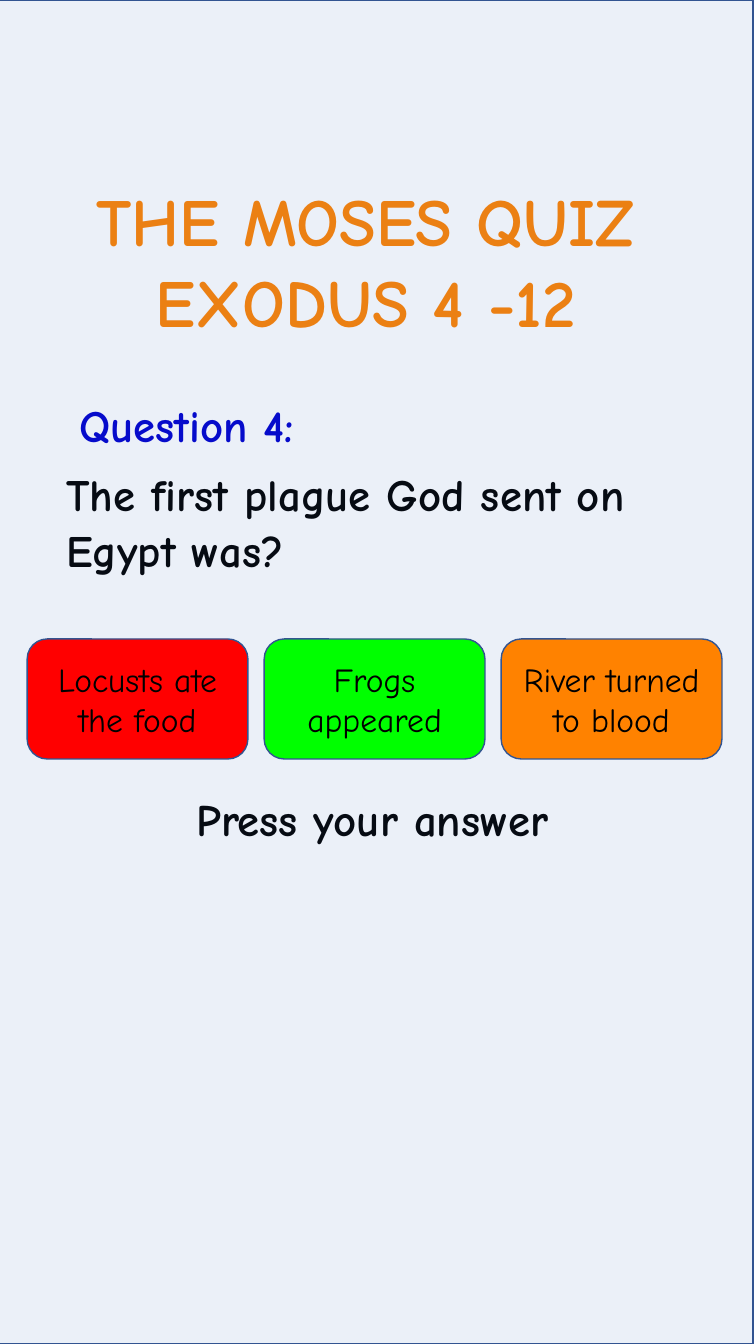
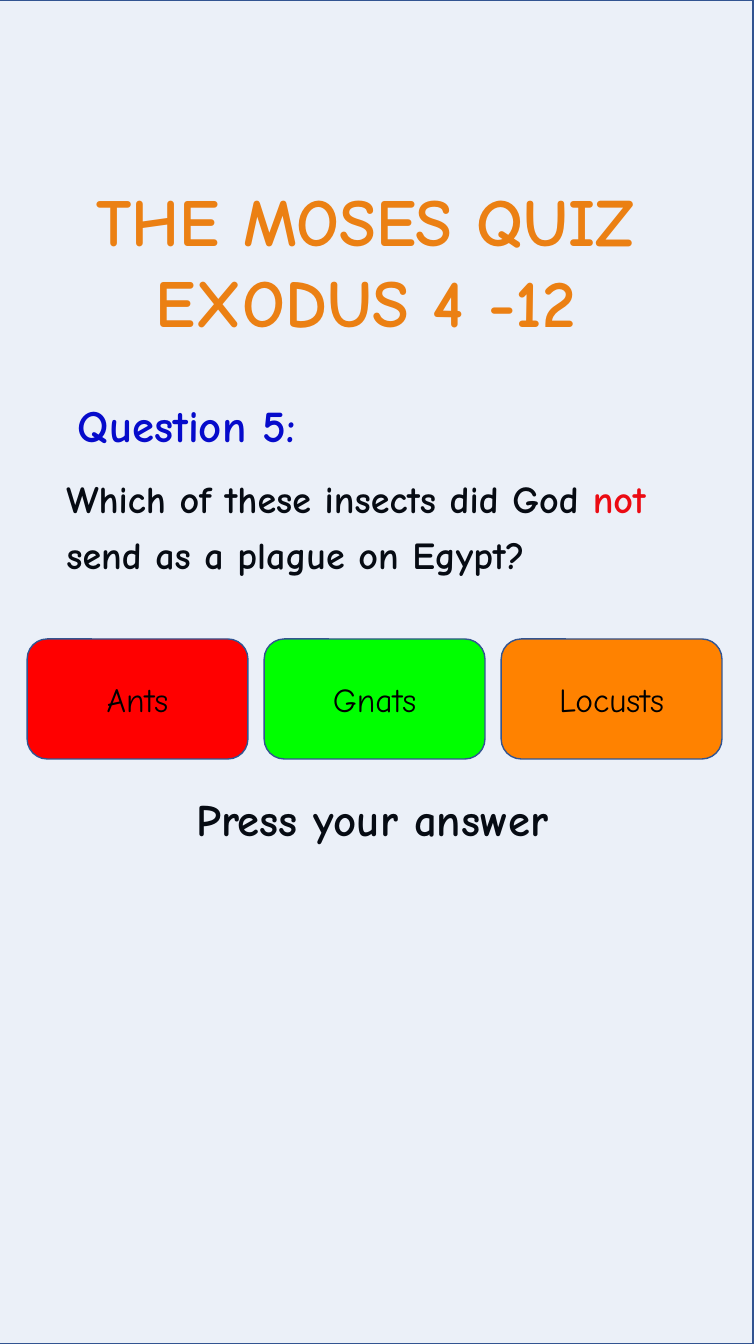
from dataclasses import dataclass

from lxml import etree
from pptx import Presentation
from pptx.dml.color import RGBColor
from pptx.enum.shapes import MSO_SHAPE
from pptx.enum.text import MSO_ANCHOR, PP_ALIGN
from pptx.oxml.ns import qn
from pptx.util import Pt

RECT = MSO_SHAPE.RECTANGLE
ROUND = MSO_SHAPE.ROUNDED_RECTANGLE
TOP = MSO_ANCHOR.TOP
MIDDLE = MSO_ANCHOR.MIDDLE
LEFT = PP_ALIGN.LEFT
CENTER = PP_ALIGN.CENTER
TITLE_ONLY = 5
WIDTH, HEIGHT = 540, 959.76


@dataclass(frozen=True)
class Theme:
    font: str = "Comic Neue"
    ink: str = "000000"
    title: str = "FF8200"
    label: str = "0000CC"
    alert: str = "FF0000"
    edge: str = "325491"
    veil: str = "4472C4"
    fills: tuple = ("FF0000", "00FF00", "FF8200")
    huge: float = 48
    large: float = 32
    medium: float = 27.2
    small: float = 24


THEME = Theme()
HEADING = ["THE MOSES QUIZ ", "EXODUS 4 -12 "]
PROMPT = "Press your answer"

QUIZ = [
    {
        "label": "Question 4:",
        "ask": ["The first plague God sent on Egypt was?"],
        "size": THEME.large,
        "width": 458,
        "words": ["Locusts ate the food", "Frogs appeared", "River turned to blood"],
    },
    {
        "label": "Question 5:",
        "ask": [[
            ("Which of these insects did God ", THEME.ink),
            ("not", THEME.alert),
            (" send as a plague on Egypt?", THEME.ink),
        ]],
        "size": THEME.medium,
        "width": 475.2,
        "words": ["Ants", "Gnats", "Locusts"],
    },
]


def write(shape, lines, size=THEME.large, color=THEME.ink, bold=True,
          align=LEFT, anchor=TOP, wrap=True, before=0, pitch=1.0):
    frame = shape.text_frame
    frame.word_wrap = wrap
    frame.vertical_anchor = anchor
    frame.margin_left = frame.margin_right = Pt(7.2)
    frame.margin_top = frame.margin_bottom = Pt(3.6)
    for i, line in enumerate(lines):
        para = frame.add_paragraph() if i else frame.paragraphs[0]
        para.alignment = align
        para.space_before = Pt(before)
        para.line_spacing = pitch
        parts = [(line, color)] if isinstance(line, str) else line
        for words, tint in parts:
            run = para.add_run()
            run.text = words
            run.font.name = THEME.font
            run.font.size = Pt(size)
            run.font.bold = bold
            run.font.color.rgb = RGBColor.from_string(tint)


def place(shape, box):
    shape.left, shape.top, shape.width, shape.height = map(Pt, box)


def label(slide, box, lines, **style):
    write(slide.shapes.add_textbox(*map(Pt, box)), lines, **style)


def panel(slide, box, kind, fill):
    shape = slide.shapes.add_shape(kind, *map(Pt, box))
    shape.shadow.inherit = False
    shape.fill.solid()
    shape.fill.fore_color.rgb = RGBColor.from_string(fill)
    shape.line.color.rgb = RGBColor.from_string(THEME.edge)
    shape.line.width = Pt(1)
    return shape


def header(slide, box):
    title = slide.shapes.title
    place(title, box)
    write(title, HEADING, size=THEME.huge, color=THEME.title,
          align=CENTER, wrap=False)


def question(slide, box, item):
    left, top, width, height = box
    label(slide, (left - 6.5, top, 199.4, 46), [item["label"]],
          color=THEME.label, align=CENTER, wrap=False)
    label(slide, (left, top + 48.2, width, height - 48.2), item["ask"],
          size=item["size"], before=7.5, pitch=Pt(40))


def veil(slide, box):
    shape = panel(slide, box, RECT, THEME.veil)
    tint = shape.fill._xPr.find(qn("a:solidFill"))[0]
    etree.SubElement(tint, qn("a:alpha"), val="10000")


def answers(slide, box, words, gap=11.6):
    left, top, width, height = box
    count = len(words)
    wide = (width - gap * (count - 1)) / count
    for i, (word, fill) in enumerate(zip(words, THEME.fills)):
        spot = (left + i * (wide + gap), top, wide, height)
        write(panel(slide, spot, ROUND, fill), [word], size=THEME.small,
              bold=False, align=CENTER, anchor=MIDDLE)


def page(deck, item):
    slide = deck.slides.add_slide(deck.slide_layouts[TITLE_ONLY])
    header(slide, (21.6, 124.6, 496, 123.8))
    question(slide, (40.3, 280.1, item["width"], 153.3), item)
    label(slide, (133.2, 566, 303.8, 51.8), [PROMPT], before=7.5, pitch=0.9)
    veil(slide, (-2.2, 0, WIDTH, HEIGHT))
    answers(slide, (19.4, 456.3, 496.3, 85.7), item["words"])


def main():
    deck = Presentation()
    deck.slide_width, deck.slide_height = Pt(WIDTH), Pt(HEIGHT)
    for item in QUIZ:
        page(deck, item)
    deck.save("out.pptx")


if __name__ == "__main__":
    main()
